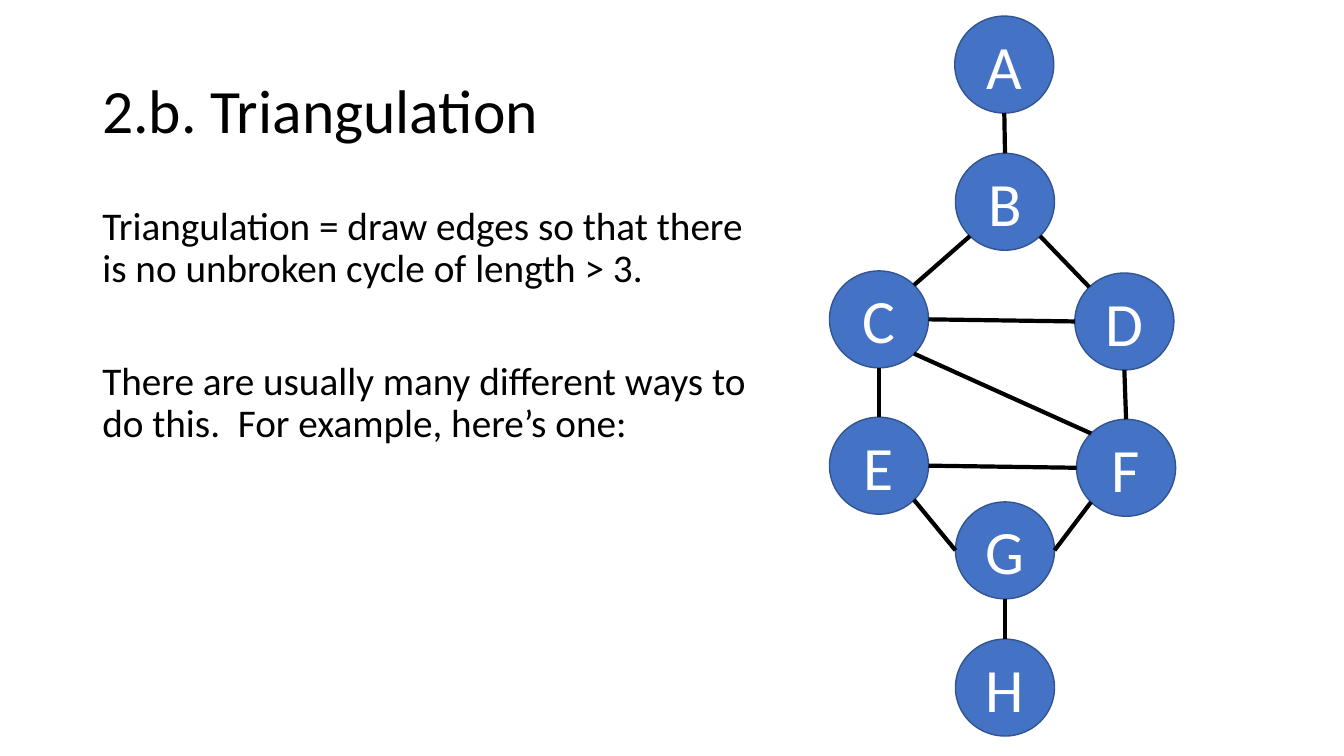
from math import sqrt

from lxml.etree import SubElement
from pptx import Presentation
from pptx.dml.color import RGBColor
from pptx.enum.shapes import MSO_CONNECTOR as Connector, MSO_SHAPE as Shape
from pptx.enum.text import MSO_ANCHOR as Anchor, PP_ALIGN as Align
from pptx.oxml.ns import qn
from pptx.util import Pt

COLORS = {"text": "000000", "node": "4472C4", "outline": "325491", "letter": "FFFFFF"}
FONT = "Calibri"
NODE_WIDTH, NODE_HEIGHT = 70.75, 69.25
NODES = {
    "A": (682, 11.5), "B": (682.5, 109.5), "C": (592.5, 193.5), "D": (767.75, 195),
    "E": (592.5, 298), "F": (769, 299.5), "G": (682.5, 358.5), "H": (682.5, 456.5),
}
NEAR, FAR = 0.5 - sqrt(2) / 4, 0.5 + sqrt(2) / 4
SIDES = {
    "top": (0.5, 0), "left": (0, 0.5), "bottom": (0.5, 1), "right": (1, 0.5),
    "top left": (NEAR, NEAR), "top right": (FAR, NEAR),
    "bottom left": (NEAR, FAR), "bottom right": (FAR, FAR),
}
EDGES = [
    ("A", "bottom", "B", "top"),
    ("B", "bottom left", "C", "top right"),
    ("B", "bottom right", "D", "top left"),
    ("C", "bottom", "E", "top"),
    ("D", "bottom", "F", "top"),
    ("E", "bottom right", "G", "left"),
    ("F", "bottom left", "G", "right"),
    ("G", "bottom", "H", "top"),
    ("E", "right", "F", "left"),
    ("C", "bottom right", "F", "top left"),
    ("C", "right", "D", "left"),
]


def color(name):
    """Return the named colour."""
    return RGBColor.from_string(COLORS[name])


def write(para, text, size, fill="text", align=Align.LEFT, spacing=1.0, before=0):
    """Write formatted text into a paragraph."""
    para.alignment = align
    para.line_spacing = spacing
    para.space_before = Pt(before)
    span = para.add_run()
    span.text = text
    span.font.name = FONT
    span.font.size = Pt(size)
    span.font.color.rgb = color(fill)


def add_text(page, frame, paragraphs, size, anchor=Anchor.TOP):
    """Add a wrapped text box from pairs of text and space before."""
    box = page.shapes.add_textbox(*map(Pt, frame)).text_frame
    box.word_wrap = True
    box.vertical_anchor = anchor
    for index, (text, before) in enumerate(paragraphs):
        para = box.add_paragraph() if index else box.paragraphs[0]
        write(para, text, size, spacing=0.9, before=before)


def add_node(page, letter):
    """Add a lettered graph node."""
    left, top = NODES[letter]
    node = page.shapes.add_shape(Shape.OVAL, Pt(left), Pt(top), Pt(NODE_WIDTH), Pt(NODE_HEIGHT))
    node.shadow.inherit = False
    node.fill.solid()
    node.fill.fore_color.rgb = color("node")
    node.line.color.rgb = color("outline")
    node.line.width = Pt(1)
    node.text_frame.vertical_anchor = Anchor.MIDDLE
    write(node.text_frame.paragraphs[0], letter, 44, fill="letter", align=Align.CENTER)


def node_point(letter, side):
    """Return the point on a node's rim at the given side."""
    left, top = NODES[letter]
    across, down = SIDES[side]
    return Pt(left + across * NODE_WIDTH), Pt(top + down * NODE_HEIGHT)


def add_edge(page, start, start_side, end, end_side):
    """Draw an edge between two nodes."""
    edge = page.shapes.add_connector(
        Connector.STRAIGHT, *node_point(start, start_side), *node_point(end, end_side)
    )
    edge.line.color.rgb = color("text")
    edge.line.width = Pt(3)
    SubElement(edge._element.spPr, qn("a:effectLst"))


def main():
    """Build and save the slide."""
    deck = Presentation()
    deck.slide_width, deck.slide_height = Pt(960), Pt(540)
    page = deck.slides.add_slide(deck.slide_layouts[6])
    add_text(page, (66, 28.75, 420.5, 104.5), [("2.b. Triangulation", 0)], 44, Anchor.MIDDLE)
    body = [
        ("Triangulation = draw edges so that there is no unbroken cycle of length > 3.", 0),
        ("There are usually many different ways to do this.  For example, here’s one:", 50.5),
    ]
    add_text(page, (66, 143.75, 475, 381.5), body, 28)
    for letter in NODES:
        add_node(page, letter)
    for edge in EDGES:
        add_edge(page, *edge)
    deck.save("out.pptx")


if __name__ == "__main__":
    main()
